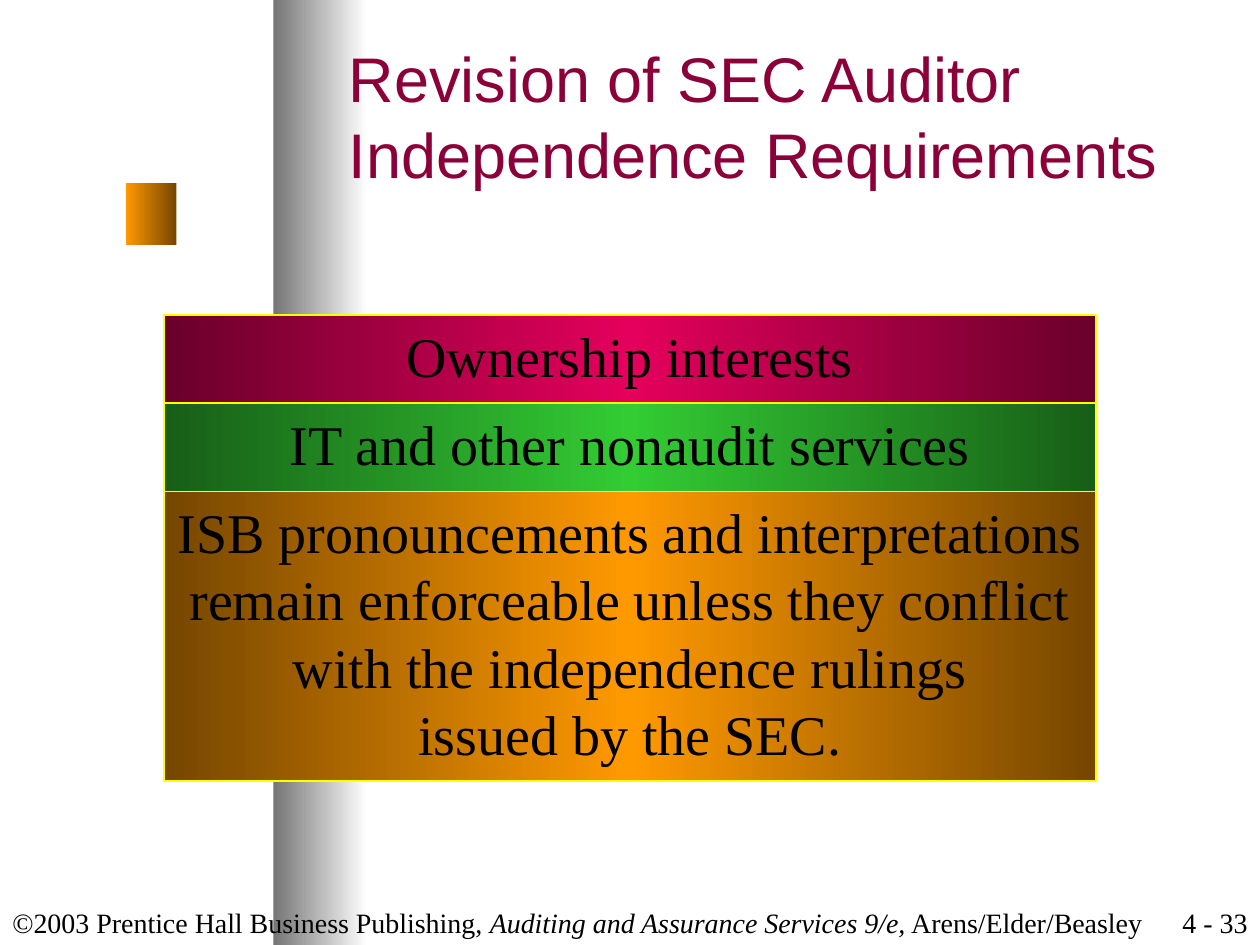
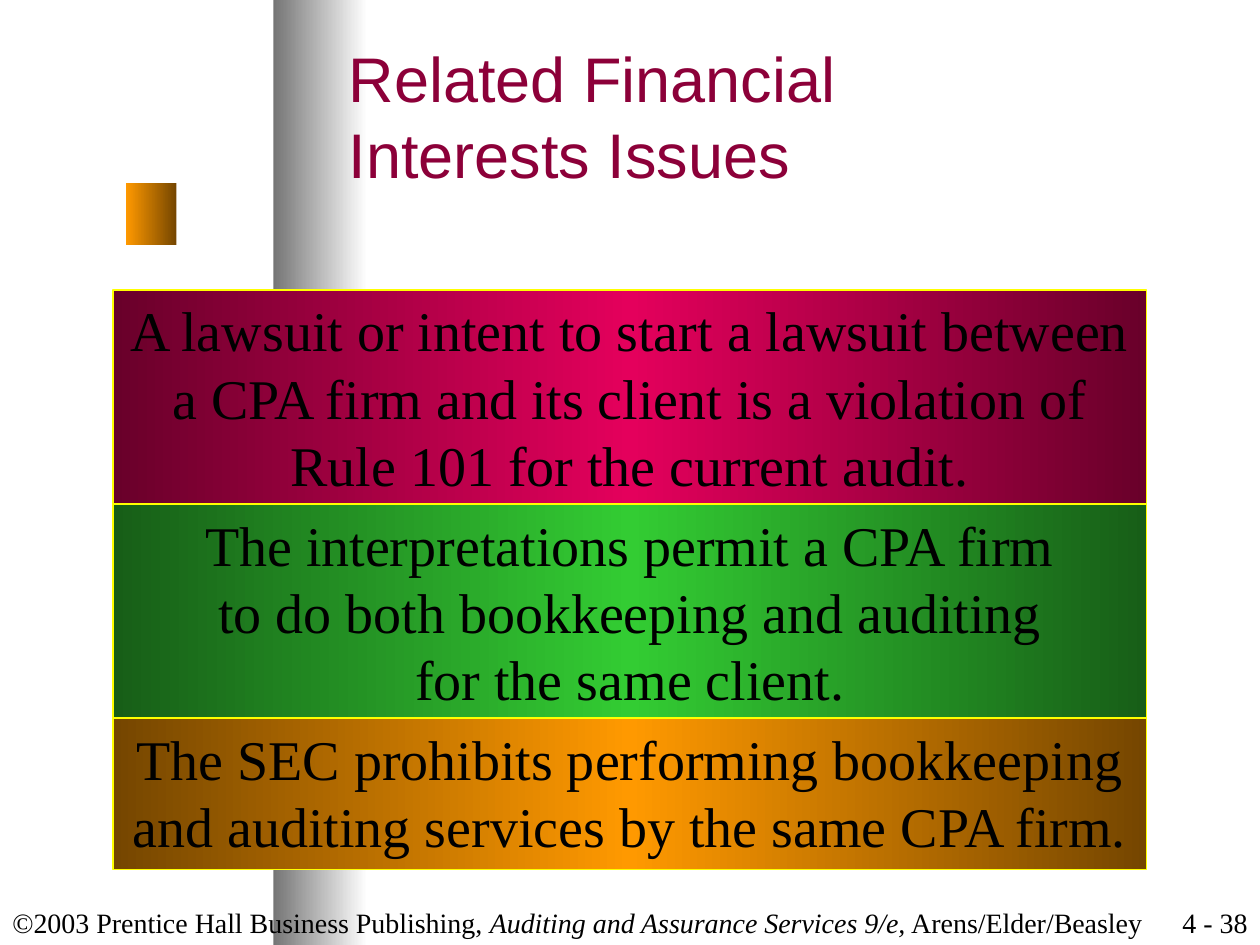
"""Build two slides on auditor independence with a shared frame and stacked bars."""
from copy import deepcopy

from pptx import Presentation
from pptx.dml.color import RGBColor
from pptx.enum.shapes import MSO_SHAPE as SHAPE
from pptx.enum.text import MSO_ANCHOR as ANCHOR, PP_ALIGN as ALIGN
from pptx.oxml.ns import qn
from pptx.util import Cm, Pt

FOOTER = ("©2003 Prentice Hall Business Publishing, "
          "*Auditing and Assurance Services 9/e,* Arens/Elder/Beasley")
SLIDES = [
    dict(
        title="Revision of SEC Auditor Independence Requirements",
        page="4 - 33",
        top=6.35,
        width=18.8,
        bars=[
            (1.78, "Ownership interests"),
            (1.78, "IT and other nonaudit services"),
            (5.84, "ISB pronouncements and interpretations\n"
                   "remain enforceable unless they conflict\n"
                   "with the independence rulings\n"
                   "issued by the SEC."),
        ],
    ),
    dict(
        title="Related Financial\nInterests Issues",
        page="4 - 38",
        top=5.84,
        width=20.83,
        bars=[
            (4.32, "A lawsuit or intent to start a lawsuit between\n"
                   "a CPA firm and its client is a violation of\n"
                   "Rule 101 for the current audit."),
            (4.32, "The interpretations permit a CPA firm\n"
                   "to do both bookkeeping and auditing\n"
                   "for the same client."),
            (3.05, "The SEC prohibits performing bookkeeping\n"
                   "and auditing services by the same CPA firm."),
        ],
    ),
]

WIDTH, HEIGHT = 25.4, 19.05
BLACK = RGBColor(0x00, 0x00, 0x00)
WHITE = RGBColor(0xFF, 0xFF, 0xFF)
GREY = RGBColor(0x75, 0x75, 0x75)
YELLOW = RGBColor(0xFF, 0xFF, 0x00)
MAROON = RGBColor(0x8C, 0x00, 0x39)
CRIMSON, DARK_CRIMSON = RGBColor(0xE4, 0x00, 0x5C), RGBColor(0x69, 0x00, 0x2A)
GREEN, DARK_GREEN = RGBColor(0x33, 0xCC, 0x33), RGBColor(0x17, 0x5E, 0x17)
ORANGE, DARK_ORANGE = RGBColor(0xFF, 0x99, 0x00), RGBColor(0x75, 0x46, 0x00)
BAR_COLORS = [
    (DARK_CRIMSON, CRIMSON, DARK_CRIMSON),
    (DARK_GREEN, GREEN, DARK_GREEN),
    (DARK_ORANGE, ORANGE, DARK_ORANGE),
]
SERIF, SANS = "Times New Roman", "Arial"
LEADING = 1.2


def write(sp, text, size, font=SERIF, color=BLACK, align=ALIGN.LEFT,
          anchor=ANCHOR.TOP, wrap=True):
    """Fill a shape with one paragraph a line; asterisks enclose italics."""
    tf = sp.text_frame
    tf.word_wrap = wrap
    tf.vertical_anchor = anchor
    for i, line in enumerate(text.split("\n")):
        p = tf.add_paragraph() if i else tf.paragraphs[0]
        p.alignment = align
        p.line_spacing = Pt(size * LEADING)
        for j, part in enumerate(line.split("*")):
            r = p.add_run()
            r.text = part
            r.font.name = font
            r.font.size = Pt(size)
            r.font.italic = j % 2 == 1
            r.font.color.rgb = color


def add_text(slide, box, text, size, **style):
    """Add a text box."""
    write(slide.shapes.add_textbox(*map(Cm, box)), text, size, **style)


def add_block(slide, box, colors, line=None):
    """Add a rectangle with a left-to-right gradient through the colours."""
    sp = slide.shapes.add_shape(SHAPE.RECTANGLE, *map(Cm, box))
    sp.shadow.inherit = False
    sp.fill.gradient()
    sp.fill.gradient_angle = 0
    stops = sp.element.spPr.find(qn("a:gradFill")).find(qn("a:gsLst"))
    for _ in colors[2:]:
        stops.append(deepcopy(stops[-1]))
    for i, (stop, color) in enumerate(zip(sp.fill.gradient_stops, colors)):
        stop.position = i / (len(colors) - 1)
        stop.color.rgb = color
    if line is None:
        sp.line.fill.background()
    else:
        sp.line.color.rgb = line
        sp.line.width = Pt(1)
    return sp


def add_frame(slide, title, page):
    """Add the band, marker, footer, page number and title."""
    add_block(slide, (5.51, 0, 1.9, HEIGHT), (GREY, WHITE))
    add_block(slide, (2.54, 3.68, 1.02, 1.27), (ORANGE, DARK_ORANGE))
    add_text(slide, (0, 17.78, 23.37, 1.27), FOOTER, 16,
             anchor=ANCHOR.BOTTOM, wrap=False)
    add_text(slide, (22.86, 17.78, 2.54, 1.27), page, 16,
             align=ALIGN.RIGHT, anchor=ANCHOR.BOTTOM)
    add_text(slide, (6.78, 0.64, 17.78, 3.38), title, 36, font=SANS,
             color=MAROON, anchor=ANCHOR.MIDDLE)


def add_bars(slide, top, width, bars):
    """Stack the bars downwards, centred on the slide."""
    for (height, text), colors in zip(bars, BAR_COLORS):
        box = ((WIDTH - width) / 2, top, width, height)
        sp = add_block(slide, box, colors, line=YELLOW)
        write(sp, text, 32, align=ALIGN.CENTER, wrap=False)
        top += height


def main():
    """Build and save the presentation."""
    prs = Presentation()
    prs.slide_width, prs.slide_height = Cm(WIDTH), Cm(HEIGHT)
    for content in SLIDES:
        slide = prs.slides.add_slide(prs.slide_layouts[6])
        add_frame(slide, content["title"], content["page"])
        add_bars(slide, content["top"], content["width"], content["bars"])
    prs.save("out.pptx")


if __name__ == "__main__":
    main()
